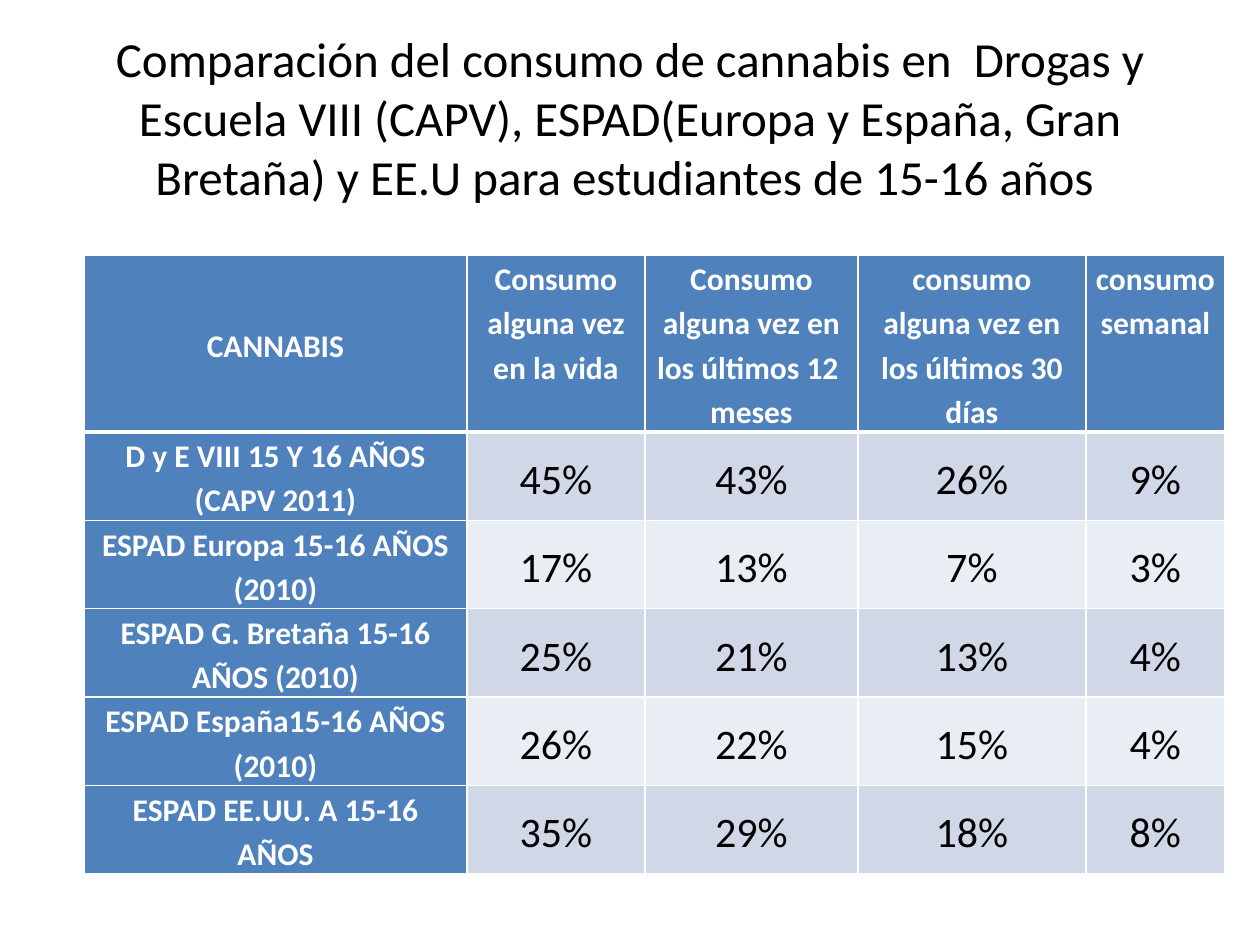
from lxml.etree import SubElement
from pptx import Presentation
from pptx.dml.color import RGBColor
from pptx.enum.text import MSO_ANCHOR as Anchor, PP_ALIGN as Align
from pptx.oxml.ns import qn
from pptx.util import Pt

EMU_PER_PX = 914400 / 126
BLUE, WHITE, BLACK = "4F81BD", "FFFFFF", "000000"
BANDS = ["D0D8E8", "E9EDF4"]
LABEL = {"size": Pt(18), "bold": True, "name": "Calibri"}
FIGURE = {"size": Pt(24), "bold": False, "name": "Calibri"}
HEADING = {"size": Pt(28), "bold": False, "name": "Calibri"}

COLUMN_WIDTHS = [383, 178, 213, 228, 139]
ROW_HEIGHTS = [176] + [88] * 5
ROWS = [
    ["CANNABIS", "Consumo alguna vez en la vida",
     "Consumo alguna vez en los últimos 12  meses",
     "consumo alguna vez en los últimos 30 días", "consumo semanal"],
    ["D y E VIII 15 Y 16 AÑOS (CAPV 2011)", "45%", "43%", "26%", "9%"],
    ["ESPAD Europa 15-16 AÑOS (2010)", "17%", "13%", "7%", "3%"],
    ["ESPAD G. Bretaña 15-16 AÑOS (2010)", "25%", "21%", "13%", "4%"],
    ["ESPAD España15-16 AÑOS (2010)", "26%", "22%", "15%", "4%"],
    ["ESPAD EE.UU. A 15-16 AÑOS", "35%", "29%", "18%", "8%"],
]


def px(*lengths):
    """Turn px into EMU."""
    return [round(length * EMU_PER_PX) for length in lengths]


def write(frame, text, style, color):
    """Put one centred run into a text frame and return its paragraph."""
    para = frame.paragraphs[0]
    para.alignment = Align.CENTER
    span = para.add_run()
    span.text = text
    for name, value in style.items():
        setattr(span.font, name, value)
    span.font.color.rgb = RGBColor.from_string(color)
    return para


deck = Presentation()
deck.slide_width, deck.slide_height = px(1260, 945)
page = deck.slides.add_slide(deck.slide_layouts[5])

title = page.shapes.title
title.left, title.top, title.width, title.height = px(63, 38, 1134, 158)
title.text_frame.vertical_anchor = Anchor.MIDDLE
write(title.text_frame,
      "Comparación del consumo de cannabis en  Drogas y Escuela VIII (CAPV), "
      "ESPAD(Europa y España, Gran Bretaña) y EE.U para estudiantes de "
      "15-16 años ", HEADING, BLACK)

table = page.shapes.add_table(
    len(ROWS), len(COLUMN_WIDTHS),
    *px(84, 255, sum(COLUMN_WIDTHS), sum(ROW_HEIGHTS))).table
for column, width in zip(table.columns, px(*COLUMN_WIDTHS)):
    column.width = width
for row, height in zip(table.rows, px(*ROW_HEIGHTS)):
    row.height = height

side_margin, = px(9)
for r, texts in enumerate(ROWS):
    for c, text in enumerate(texts):
        cell = table.cell(r, c)
        is_label = r == 0 or c == 0
        top_aligned = r == 0 and c > 0
        cell.vertical_anchor = Anchor.TOP if top_aligned else Anchor.MIDDLE
        cell.margin_left = cell.margin_right = side_margin
        cell.margin_top = cell.margin_bottom = 0

        # Borders come before the fill in the cell properties
        for side in ["L", "R", "T", "B"]:
            under_header = (r, side) in [(0, "B"), (1, "T")]
            line = SubElement(cell._tc.get_or_add_tcPr(), qn(f"a:ln{side}"),
                              w=str(Pt(3 if under_header else 1)))
            paint = SubElement(line, qn("a:solidFill"))
            SubElement(paint, qn("a:srgbClr"), val=WHITE)
        cell.fill.solid()
        fill_color = BLUE if is_label else BANDS[(r - 1) % 2]
        cell.fill.fore_color.rgb = RGBColor.from_string(fill_color)

        para = write(cell.text_frame, text, LABEL if is_label else FIGURE,
                     WHITE if is_label else BLACK)
        para.line_spacing = 1.15

deck.save("out.pptx")
